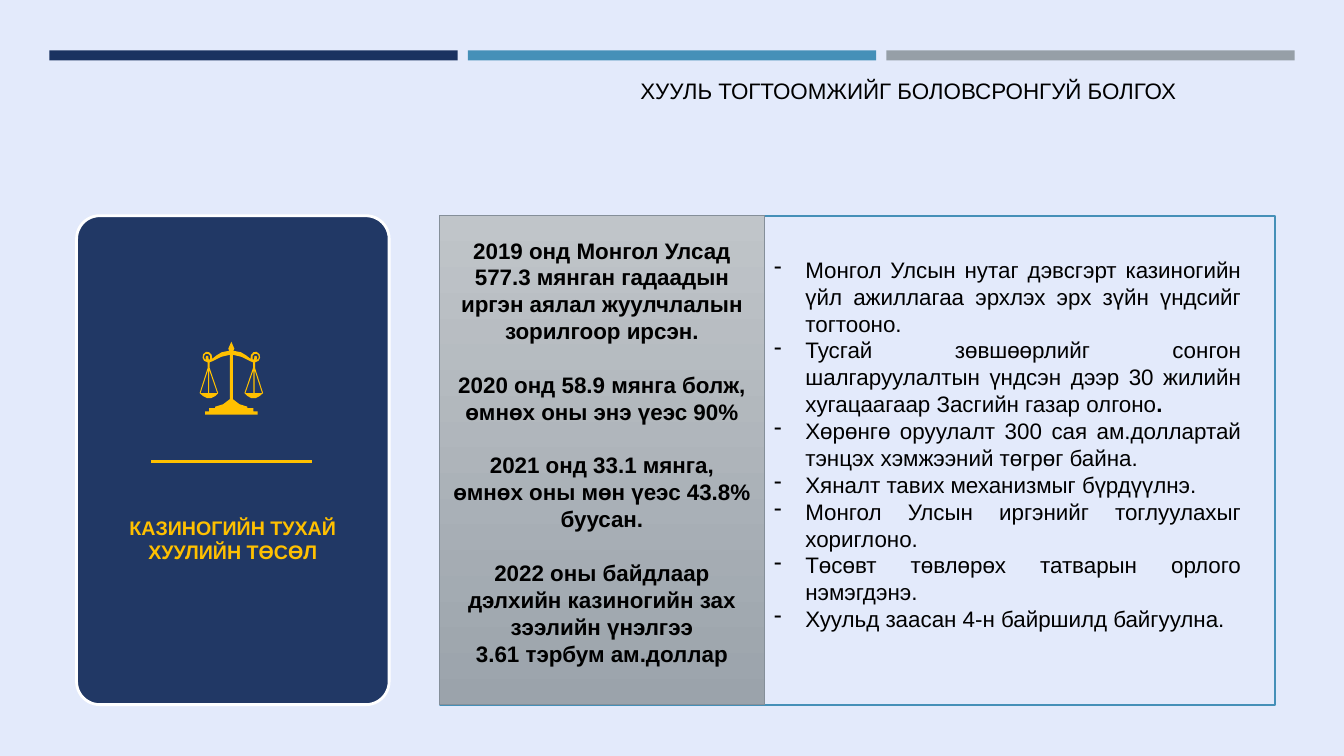
from lxml.etree import SubElement
from pptx import Presentation
from pptx.dml.color import RGBColor
from pptx.enum.shapes import MSO_CONNECTOR, MSO_SHAPE
from pptx.enum.text import MSO_ANCHOR, PP_ALIGN
from pptx.oxml.ns import qn
from pptx.util import Inches, Pt

BACKGROUND = RGBColor(0xE3, 0xEA, 0xFB)
DARK_NAVY = RGBColor(0x1A, 0x32, 0x60)
NAVY = RGBColor(0x21, 0x38, 0x65)
BLUE = RGBColor(0x45, 0x90, 0xB8)
GRAY = RGBColor(0x96, 0x9F, 0xA7)
LIGHT_GRAY = RGBColor(0xC0, 0xC5, 0xC9)
MIDDLE_GRAY = RGBColor(0x9B, 0xA3, 0xAB)
BORDER_GRAY = RGBColor(0x85, 0x8F, 0x99)
GOLD = RGBColor(0xFF, 0xC0, 0x00)
WHITE = RGBColor(0xFF, 0xFF, 0xFF)
BLACK = RGBColor(0x00, 0x00, 0x00)

# Grid, in inches
BAR_LEFT, BAR_WIDTH, BAR_STEP = 0.49, 4.05, 4.15
BODY_TOP, BODY_HEIGHT = 2.14, 4.85
CARD_LEFT, CARD_WIDTH = 0.76, 3.1
PANEL_LEFT, PANEL_WIDTH, FACTS_WIDTH = 4.36, 8.29, 3.22

deck = Presentation()
deck.slide_width, deck.slide_height = Inches(13.33), Inches(7.5)
page = deck.slides.add_slide(deck.slide_layouts[6])
page.background.fill.solid()
page.background.fill.fore_color.rgb = BACKGROUND


def add_box(kind, left, top, width, height, fill=None, line=None, weight=1):
    box = page.shapes.add_shape(
        kind, Inches(left), Inches(top), Inches(width), Inches(height))
    box.shadow.inherit = False
    for part, color in ((box.fill, fill), (box.line.fill, line)):
        if color is None:
            part.background()
        else:
            part.solid()
            part.fore_color.rgb = color
    if line is not None:
        box.line.width = Pt(weight)
    return box


def write(box, paragraphs, layout, font, bullet=None):
    """Fill a box; each paragraph is a list of (text, bold) spans."""
    frame = box.text_frame
    frame.word_wrap = True
    for index, spans in enumerate(paragraphs):
        para = frame.paragraphs[0] if index == 0 else frame.add_paragraph()
        for name, value in layout.items():
            setattr(para, name, value)
        if bullet:
            properties = para._p.get_or_add_pPr()
            properties.set("marL", str(Inches(0.31)))
            properties.set("indent", str(-Inches(0.31)))
            SubElement(properties, qn("a:buFontTx"))
            SubElement(properties, qn("a:buChar")).set("char", bullet)
        for text, bold in spans:
            span = para.add_run()
            span.text = text
            for name, value in {**font, "bold": bold}.items():
                if name == "color":
                    span.font.color.rgb = value
                else:
                    setattr(span.font, name, value)


BODY_FONT = {"name": "Arial", "size": Pt(16), "color": BLACK}
CARD_FONT = {"name": "Arial", "size": Pt(14), "color": GOLD}
CENTERED = {"alignment": PP_ALIGN.CENTER, "line_spacing": Pt(19.2)}
JUSTIFIED = {"alignment": PP_ALIGN.JUSTIFY, "line_spacing": Pt(19.2)}

for column, color in enumerate((DARK_NAVY, BLUE, GRAY)):
    add_box(MSO_SHAPE.RECTANGLE, BAR_LEFT + column * BAR_STEP, 0.5, BAR_WIDTH, 0.1, color)

# Card with the name of the bill
card = add_box(MSO_SHAPE.ROUNDED_RECTANGLE, CARD_LEFT, BODY_TOP, CARD_WIDTH, BODY_HEIGHT,
               NAVY, WHITE, 2)
card.adjustments[0] = 0.074
card.text_frame.vertical_anchor = MSO_ANCHOR.MIDDLE
card.text_frame.margin_top = Inches(1.62)
write(card, [[("КАЗИНОГИЙН ТУХАЙ ХУУЛИЙН ТӨСӨЛ", True)]],
      {"alignment": PP_ALIGN.CENTER, "line_spacing": Pt(17.1)}, CARD_FONT)

# Scales: right half in hundredths of an inch from the top of the axis
SCALES_AXIS, SCALES_TOP = 2.295, 3.39
half_outline = [
    (0, 0), (3, 7), (2, 9), (9.5, 10.5), (14.5, 13.5), (19, 17), (19.5, 13), (22, 10.5),
    (25, 10), (28, 12.5), (28.5, 16), (27, 19), (23.5, 20.5), (23.5, 26), (31.5, 51),
    (28, 54), (24, 56), (20, 56), (16, 54), (13, 51), (21.5, 26), (21.5, 20.5), (19, 19.5),
    (10, 15), (1.5, 13), (1.5, 57), (8, 62), (16, 64.5), (16, 66), (22, 66), (22, 69),
    (26, 69), (26, 72.5), (0, 72.5)]
half_holes = [
    [(22, 28), (22, 51), (14, 51)],
    [(23, 28), (23, 51), (30.5, 51)],
    [(21, 17.5), (21, 14), (23, 12), (25.5, 12), (27, 14), (27, 16.5), (25, 18.5),
     (25.5, 16), (25, 14), (23, 14), (22.5, 17.5)]]
contours = [half_outline + [(-x, y) for x, y in reversed(half_outline[1:-1])]]
for hole in half_holes:
    contours += [hole, [(-x, y) for x, y in hole]]
builder = page.shapes.build_freeform(0, 0, scale=Inches(0.01) / 10)
for index, contour in enumerate(contours):
    points = [(round(10 * x), round(10 * y)) for x, y in contour]
    if index:
        builder.move_to(*points[0])
    builder.add_line_segments(points[1:] if index else points, close=True)
scales = builder.convert_to_shape(Inches(SCALES_AXIS), Inches(SCALES_TOP))
scales.shadow.inherit = False
scales.fill.solid()
scales.fill.fore_color.rgb = GOLD
scales.line.fill.background()

divider = page.shapes.add_connector(
    MSO_CONNECTOR.STRAIGHT, Inches(1.5), Inches(4.58), Inches(3.09), Inches(4.58))
divider.line.color.rgb = GOLD
divider.line.width = Pt(2.25)
SubElement(divider._element.spPr, qn("a:effectLst"))

# Panel with the provisions of the bill
add_box(MSO_SHAPE.RECTANGLE, PANEL_LEFT, BODY_TOP, PANEL_WIDTH, BODY_HEIGHT,
        line=BLUE, weight=1.5)
provisions = page.shapes.add_textbox(
    Inches(PANEL_LEFT + FACTS_WIDTH), Inches(2.49), Inches(4.83), Inches(4.41))
write(provisions, [
    [("Монгол Улсын нутаг дэвсгэрт казиногийн үйл ажиллагаа эрхлэх эрх зүйн үндсийг "
      "тогтооно.", False)],
    [("Тусгай зөвшөөрлийг сонгон шалгаруулалтын үндсэн дээр 30 жилийн хугацаагаар "
      "Засгийн газар олгоно", False), (".", True)],
    [("Хөрөнгө оруулалт 300 сая ам.доллартай тэнцэх хэмжээний төгрөг байна.", False)],
    [("Хяналт тавих механизмыг бүрдүүлнэ.", False)],
    [("Монгол Улсын иргэнийг тоглуулахыг хориглоно.", False)],
    [("Төсөвт төвлөрөх татварын орлого нэмэгдэнэ.", False)],
    [("Хуульд заасан 4-н байршилд байгуулна.", False)],
], JUSTIFIED, BODY_FONT, bullet="-")

# Tourism and market figures
facts = add_box(MSO_SHAPE.RECTANGLE, PANEL_LEFT, BODY_TOP, FACTS_WIDTH, BODY_HEIGHT,
                line=BORDER_GRAY)
facts.fill.gradient()
facts.fill.gradient_angle = 270
for stop, color in zip(facts.fill.gradient_stops, (LIGHT_GRAY, MIDDLE_GRAY)):
    stop.color.rgb = color
facts.text_frame.vertical_anchor = MSO_ANCHOR.MIDDLE
facts.text_frame.margin_bottom = Inches(0.22)
write(facts, [[(text, True)] for text in (
    "2019 онд Монгол Улсад 577.3 мянган гадаадын иргэн аялал жуулчлалын зорилгоор ирсэн.",
    "2020 онд 58.9 мянга болж, өмнөх оны энэ үеэс 90%",
    "2021 онд 33.1 мянга,",
    "өмнөх оны мөн үеэс 43.8% буусан.",
    "2022 оны байдлаар дэлхийн казиногийн зах зээлийн үнэлгээ",
    "3.61 тэрбум ам.доллар",
)], CENTERED, BODY_FONT)
for para in facts.text_frame.paragraphs:
    if para.text.startswith(("2020", "2021", "2022")):
        para.space_before = Pt(19.2)

title = page.shapes.add_textbox(Inches(3.49), Inches(0.72), Inches(11.04), Inches(0.37))
write(title, [[("ХУУЛЬ ТОГТООМЖИЙГ БОЛОВСРОНГУЙ БОЛГОХ", False)]], CENTERED, BODY_FONT)

deck.save("out.pptx")
